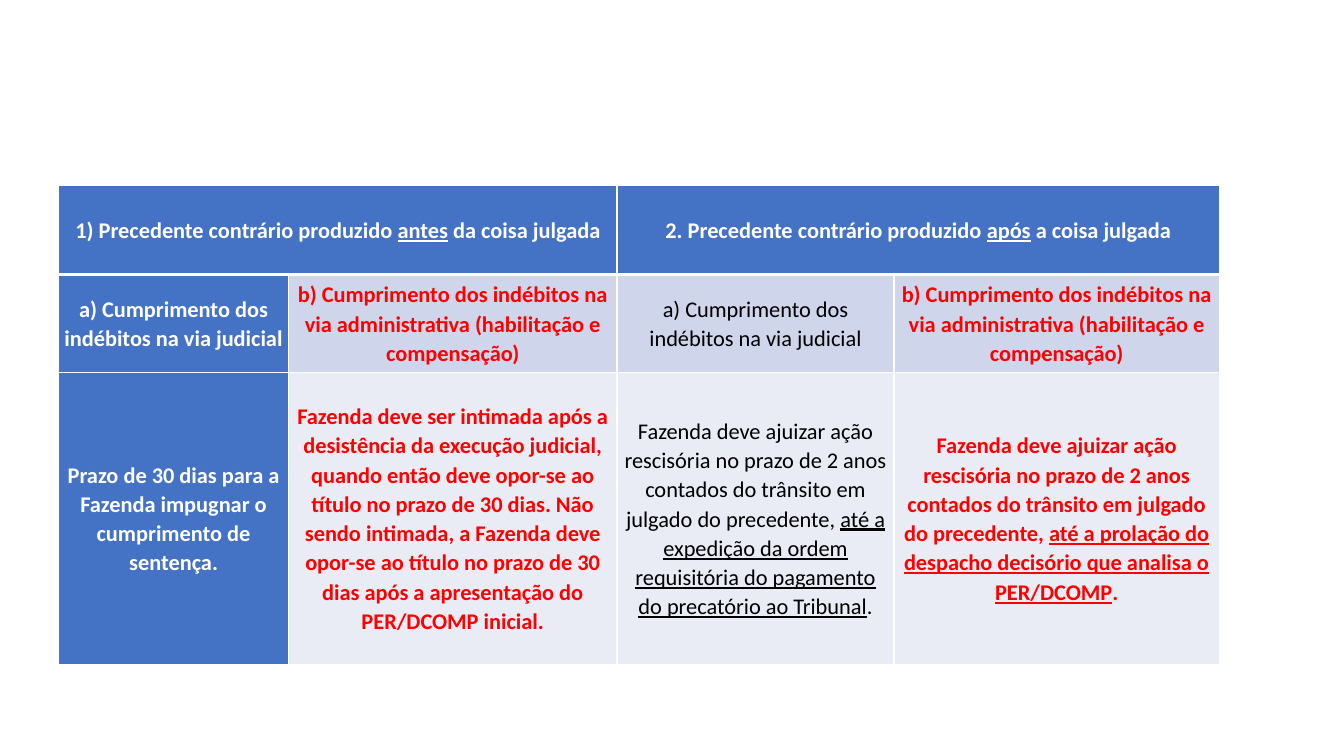
import dataclasses

import lxml.etree
import pptx
import pptx.dml.color
import pptx.enum.text
import pptx.oxml.ns
import pptx.table
import pptx.util
from pptx.dml.color import RGBColor
from pptx.util import Cm, Pt

WHITE = RGBColor(0xFF, 0xFF, 0xFF)
BLACK = RGBColor(0x00, 0x00, 0x00)
RED = RGBColor(0xFF, 0x00, 0x00)
BLUE = RGBColor(0x44, 0x72, 0xC4)
LAVENDER = RGBColor(0xCF, 0xD5, 0xEA)
PALE_LAVENDER = RGBColor(0xE9, 0xEB, 0xF5)

COLUMN_WIDTHS = (5.79, 8.28, 6.98, 8.2)
ROW_HEIGHTS = (2.26, 2.46, 7.37)
THIN_BORDER = Pt(1)
HEADER_BORDER = Pt(3)


@dataclasses.dataclass(frozen=True)
class CellContent:
    row: int
    column: int
    fill: RGBColor
    color: RGBColor
    before: str
    underlined: str = ""
    after: str = ""
    bold: bool = True
    span: int = 1


ADMINISTRATIVE = (
    "b) Cumprimento dos indébitos na via administrativa (habilitação e compensação)"
)
JUDICIAL = "a) Cumprimento dos indébitos na via judicial"
RESCISSION = (
    "Fazenda deve ajuizar ação rescisória no prazo de 2 anos contados "
    "do trânsito em julgado do precedente, "
)

CELLS = (
    # Header
    CellContent(0, 0, BLUE, WHITE, "1) Precedente contrário produzido ",
                "antes", " da coisa julgada", span=2),
    CellContent(0, 2, BLUE, WHITE, "2. Precedente contrário produzido ",
                "após", " a coisa julgada", span=2),
    # Ways of enforcing the judgment
    CellContent(1, 0, BLUE, WHITE, JUDICIAL),
    CellContent(1, 1, LAVENDER, RED, ADMINISTRATIVE),
    CellContent(1, 2, LAVENDER, BLACK, JUDICIAL, bold=False),
    CellContent(1, 3, LAVENDER, RED, ADMINISTRATIVE),
    # Deadlines
    CellContent(2, 0, BLUE, WHITE,
                "Prazo de 30 dias para a Fazenda impugnar o cumprimento de sentença."),
    CellContent(2, 1, PALE_LAVENDER, RED,
                "Fazenda deve ser intimada após a desistência da execução judicial, "
                "quando então deve opor-se ao título no prazo de 30 dias. Não sendo "
                "intimada, a Fazenda deve opor-se ao título no prazo de 30 dias após "
                "a apresentação do PER/DCOMP inicial."),
    CellContent(2, 2, PALE_LAVENDER, BLACK, RESCISSION,
                "até a expedição da ordem requisitória do pagamento do precatório "
                "ao Tribunal", ".", bold=False),
    CellContent(2, 3, PALE_LAVENDER, RED, RESCISSION,
                "até a prolação do despacho decisório que analisa o PER/DCOMP", "."),
)


def add_borders(cell: pptx.table._Cell, row: int) -> None:
    """Draw white borders, heavier on the line under the header."""
    properties = cell._tc.get_or_add_tcPr()
    widths = {
        "a:lnL": THIN_BORDER,
        "a:lnR": THIN_BORDER,
        "a:lnT": HEADER_BORDER if row == 1 else THIN_BORDER,
        "a:lnB": HEADER_BORDER if row == 0 else THIN_BORDER,
    }
    for tag, width in widths.items():
        line = lxml.etree.SubElement(
            properties, pptx.oxml.ns.qn(tag), w=str(int(width)))
        fill = lxml.etree.SubElement(line, pptx.oxml.ns.qn("a:solidFill"))
        lxml.etree.SubElement(fill, pptx.oxml.ns.qn("a:srgbClr"), val=str(WHITE))


def write_text(cell: pptx.table._Cell, content: CellContent) -> None:
    """Write the centred paragraph run by run."""
    cell.vertical_anchor = pptx.enum.text.MSO_ANCHOR.MIDDLE
    cell.margin_left = cell.margin_right = Cm(0.13)
    cell.margin_top = cell.margin_bottom = Cm(0)
    paragraph = cell.text_frame.paragraphs[0]
    paragraph.alignment = pptx.enum.text.PP_ALIGN.CENTER
    paragraph.line_spacing = 1.07
    paragraph.space_after = Pt(8)
    for text in (content.before, content.underlined, content.after):
        if not text:
            continue
        run = paragraph.add_run()
        run.text = text
        run.font.name = "Calibri"
        run.font.size = Pt(16)
        run.font.bold = content.bold
        run.font.underline = text == content.underlined
        run.font.color.rgb = content.color


def fill_cell(table: pptx.table.Table, content: CellContent) -> None:
    """Merge, frame, colour and write one table entry."""
    first = table.cell(content.row, content.column)
    last_column = content.column + content.span - 1
    if content.span > 1:
        first.merge(table.cell(content.row, last_column))
    for column in range(content.column, last_column + 1):
        cell = table.cell(content.row, column)
        add_borders(cell, content.row)
        cell.fill.solid()
        cell.fill.fore_color.rgb = content.fill
    write_text(first, content)


def main() -> None:
    presentation = pptx.Presentation()
    presentation.slide_width = Cm(33.87)
    presentation.slide_height = Cm(19.05)
    slide = presentation.slides.add_slide(presentation.slide_layouts[6])

    # Table of deadlines
    table = slide.shapes.add_table(
        len(ROW_HEIGHTS), len(COLUMN_WIDTHS), Cm(1.48), Cm(4.66),
        Cm(sum(COLUMN_WIDTHS)), Cm(sum(ROW_HEIGHTS))).table
    for column, width in zip(table.columns, COLUMN_WIDTHS):
        column.width = Cm(width)
    for row, height in zip(table.rows, ROW_HEIGHTS):
        row.height = Cm(height)
    for content in CELLS:
        fill_cell(table, content)

    presentation.save("out.pptx")


if __name__ == "__main__":
    main()
